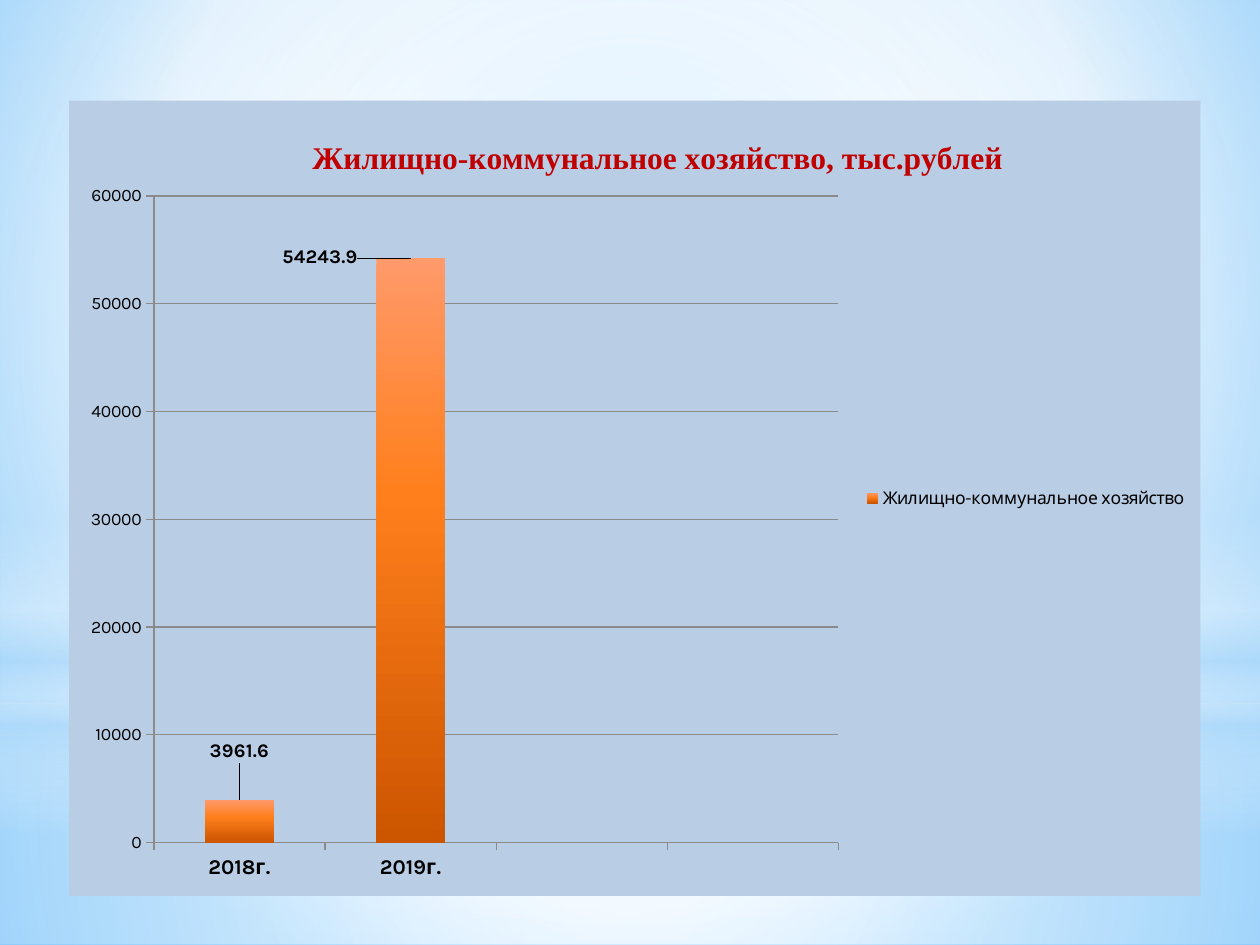
import pptx
import pptx.chart.data
import pptx.dml.color
import pptx.enum.chart
import pptx.enum.shapes
import pptx.oxml
import pptx.oxml.ns
import pptx.util
from pptx.util import Pt

COLORS = {"white": "FFFFFF", "haze": "B4DCFA", "sky": "9ED5FF", "deep sky": "5BB9FF",
          "panel": "B9CDE5", "title": "C00000", "text": "000000", "grid": "8B8B8B",
          "bar top": "FF9A6B", "bar middle": "FF7F1C", "bar bottom": "CC5500"}
FONT = "Karla"
TITLE_FONT = "Times New Roman"
NAME = "Жилищно-коммунальное хозяйство"
TITLE = NAME + ", тыс.рублей"
CATEGORIES = ["2018г.", "2019г.", "", ""]
VALUES = [3961.6, 54243.9, None, None]
LABEL_OFFSETS = [(0, -0.04), (-0.08, 0.02)]

# Gradient stops are (position %, colour, opacity %).
# A direction is an angle or the four insets (%) of a circular centre.
CENTER = (50, 50, 50, 50)
BACKGROUND = ([(0, "sky", 100), (60, "white", 100), (100, "deep sky", 100)], (20, 10, 20, 60))
BAR = ([(0, "bar top", 100), (40, "bar middle", 100), (100, "bar bottom", 100)], 90)
# Shape kind, (left, top, width, height), stops, direction
GLOWS = [
    ("RECTANGLE", (0, 402, 720, 138),
     [(0, "white", 91), (37, "white", 76), (100, "haze", 79)], CENTER),
    ("RECTANGLE", (0, 0, 720, 402),
     [(0, "white", 89), (48, "white", 62), (100, "haze", 79)], CENTER),
    ("RECTANGLE", (0, 296.6, 720, 180),
     [(0, "white", 0), (29, "white", 30), (45, "haze", 40), (55, "white", 26),
      (65, "haze", 60), (100, "white", 0)], 90),
    ("OVAL", (0, 126, 720, 402), [(0, "white", 100), (56, "white", 0)], CENTER),
]


def rgb(name):
    return pptx.dml.color.RGBColor.from_string(COLORS[name])


def paint(fill, element, stops, direction):
    """Give the fill inside element a gradient."""
    fill.solid()
    stop_xml = "".join(
        f'<a:gs pos="{position * 1000}"><a:srgbClr val="{COLORS[color]}">'
        f'<a:alpha val="{opacity * 1000}"/></a:srgbClr></a:gs>'
        for position, color, opacity in stops)
    if isinstance(direction, tuple):
        insets = " ".join(f'{side}="{inset * 1000}"' for side, inset in zip("ltrb", direction))
        direction_xml = f'<a:path path="circle"><a:fillToRect {insets}/></a:path>'
    else:
        direction_xml = f'<a:lin ang="{direction * 60000}" scaled="0"/>'
    gradient = pptx.oxml.parse_xml(
        f'<a:gradFill {pptx.oxml.ns.nsdecls("a")} rotWithShape="1">'
        f'<a:gsLst>{stop_xml}</a:gsLst>{direction_xml}</a:gradFill>')
    solid = next(element.iter(pptx.oxml.ns.qn("a:solidFill")))
    solid.getparent().replace(solid, gradient)


def place(element, index, x, y, size=None, edge=False):
    """Set a manual layout, in fractions of the chart, as child number index."""
    for old in element.findall(pptx.oxml.ns.qn("c:layout")):
        element.remove(old)
    settings = []
    if size:
        settings.append(("layoutTarget", "inner"))
    if edge:
        settings += [("xMode", "edge"), ("yMode", "edge")]
    settings += [("x", x), ("y", y)]
    if size:
        settings += zip("wh", size)
    body = "".join(f'<c:{tag} val="{value}"/>' for tag, value in settings)
    element.insert(index, pptx.oxml.parse_xml(
        f'<c:layout {pptx.oxml.ns.nsdecls("c")}><c:manualLayout>{body}'
        '</c:manualLayout></c:layout>'))


def style(font, size, bold=False, color="text", name=FONT):
    font.size, font.bold, font.name = Pt(size), bold, name
    font.color.rgb = rgb(color)


def add_chart(slide):
    data = pptx.chart.data.CategoryChartData(number_format="General")
    data.categories = CATEGORIES
    data.add_series(NAME, VALUES)
    chart = slide.shapes.add_chart(
        pptx.enum.chart.XL_CHART_TYPE.COLUMN_CLUSTERED,
        Pt(39.5), Pt(57.5), Pt(646.5), Pt(454.5), data).chart
    style(chart.font, 10)
    chart_space = chart.element
    panel = pptx.oxml.parse_xml(
        f'<c:spPr {pptx.oxml.ns.nsdecls("c", "a")}><a:solidFill>'
        f'<a:srgbClr val="{COLORS["panel"]}"/></a:solidFill><a:ln><a:noFill/></a:ln></c:spPr>')
    chart_space.find(pptx.oxml.ns.qn("c:chart")).addnext(panel)

    run = chart.chart_title.text_frame.paragraphs[0].add_run()
    run.text = TITLE
    style(run.font, 18, True, "title", TITLE_FONT)
    chart.chart_title.include_in_layout = False
    place(next(chart_space.iter(pptx.oxml.ns.qn("c:title"))), 1, 0.21, 0.04, edge=True)
    place(next(chart_space.iter(pptx.oxml.ns.qn("c:plotArea"))), 0, 0.075, 0.12,
          size=(0.605, 0.813), edge=True)

    chart.has_legend = True
    chart.legend.position = pptx.enum.chart.XL_LEGEND_POSITION.RIGHT
    chart.legend.include_in_layout = False
    style(chart.legend.font, 10)

    for axis, size, bold in ((chart.category_axis, 12, True), (chart.value_axis, 10, False)):
        axis.major_tick_mark = pptx.enum.chart.XL_TICK_MARK.OUTSIDE
        axis.format.line.color.rgb = rgb("grid")
        style(axis.tick_labels.font, size, bold)
    axis = chart.value_axis
    axis.minimum_scale, axis.maximum_scale, axis.major_unit = 0, 60000, 10000
    axis.has_major_gridlines = True
    axis.major_gridlines.format.line.color.rgb = rgb("grid")

    plot = chart.plots[0]
    plot.gap_width = 150
    plot.vary_by_categories = False
    series = plot.series[0]
    paint(series.format.fill, series._element, *BAR)
    series.data_labels.show_value = True
    style(series.data_labels.font, 11, True)
    for index, offset in enumerate(LABEL_OFFSETS):
        label = series.points[index].data_label
        style(label.font, 11, True)
        label.position = pptx.enum.chart.XL_LABEL_POSITION.OUTSIDE_END
    for element, offset in zip(series._element.iter(pptx.oxml.ns.qn("c:dLbl")), LABEL_OFFSETS):
        place(element, 1, *offset)


def main():
    presentation = pptx.Presentation()
    presentation.slide_width, presentation.slide_height = Pt(720), Pt(540)
    slide = presentation.slides.add_slide(presentation.slide_layouts[6])
    paint(slide.background.fill, slide.element, *BACKGROUND)
    for kind, box, stops, direction in GLOWS:
        shape = slide.shapes.add_shape(
            pptx.enum.shapes.MSO_SHAPE[kind], *(Pt(length) for length in box))
        shape.shadow.inherit = False
        shape.line.fill.background()
        paint(shape.fill, shape.element, stops, direction)
    add_chart(slide)
    presentation.save("out.pptx")


if __name__ == "__main__":
    main()
